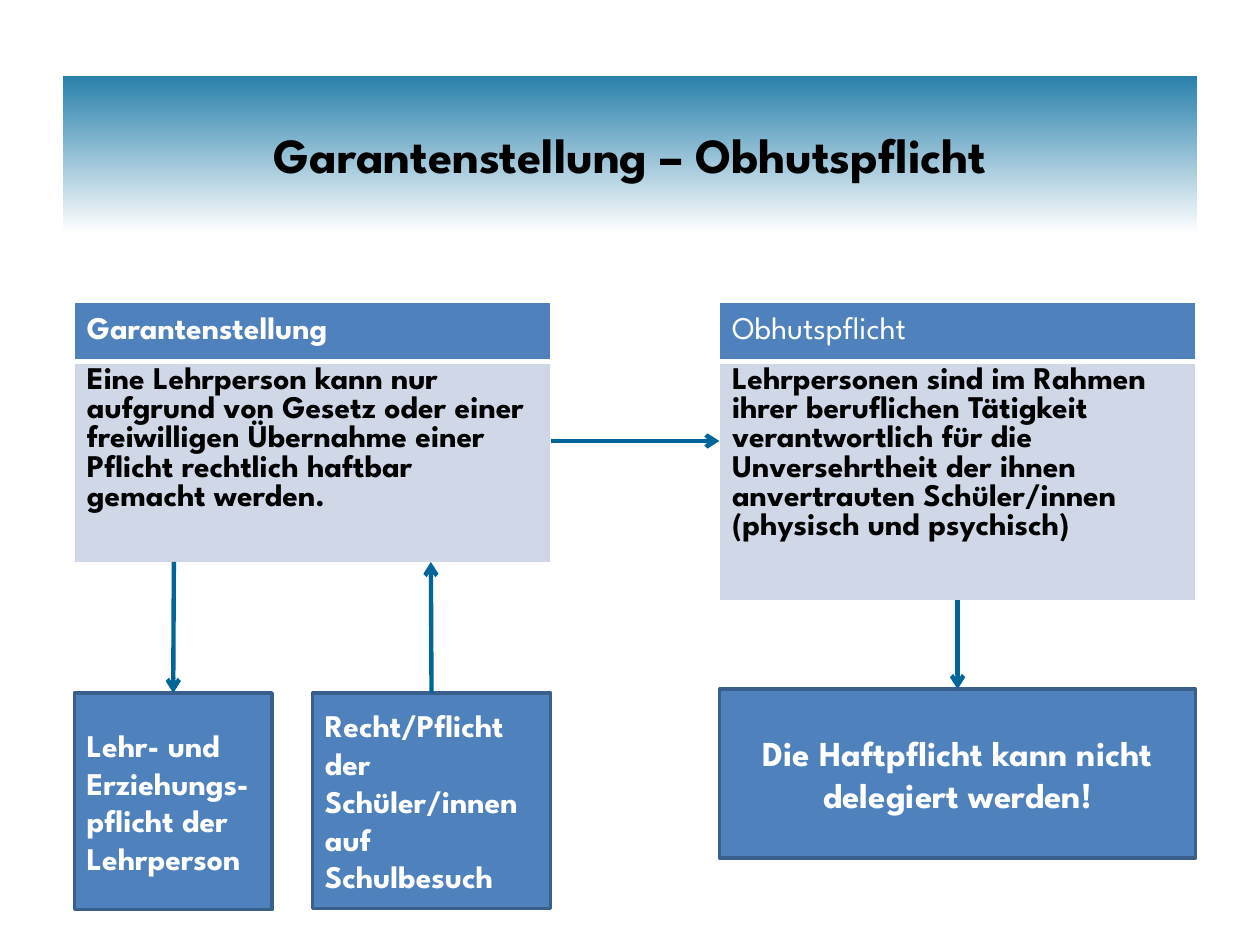
from dataclasses import dataclass

from lxml import etree
from pptx import Presentation, util as u
from pptx.dml.color import RGBColor
from pptx.enum import shapes, text
from pptx.oxml.ns import qn


@dataclass(frozen=True)
class Theme:
    font: str = "League Spartan"
    black: str = "000000"
    white: str = "FFFFFF"
    blue: str = "4F81BD"
    pale: str = "D0D8E8"
    outline: str = "3A5F8C"
    arrow: str = "006699"
    banner: str = "2880AB"
    title_size: int = 28
    emphasis_size: int = 20
    body_size: int = 18


@dataclass(frozen=True)
class Definition:
    term: str
    meaning: str
    left: float
    meaning_height: float
    term_bold: bool


@dataclass(frozen=True)
class Consequence:
    wording: str
    left: float
    top: float
    width: float
    height: float
    size: int
    align: text.PP_ALIGN


THEME = Theme()
COLUMN_WIDTH, TABLE_TOP, TERM_HEIGHT = 3.78, 2.4, 0.47
LEFT_COLUMN, RIGHT_COLUMN = 0.59, 5.71

GUARANTOR = Definition(
    "Garantenstellung",
    "Eine Lehrperson kann nur aufgrund von Gesetz oder einer freiwilligen "
    "Übernahme einer Pflicht rechtlich haftbar gemacht werden.",
    LEFT_COLUMN, 1.6, True)
CARE = Definition(
    "Obhutspflicht",
    "Lehrpersonen sind im Rahmen ihrer beruflichen Tätigkeit verantwortlich für "
    "die Unversehrtheit der ihnen anvertrauten Schüler/innen (physisch und psychisch)",
    RIGHT_COLUMN, 1.9, False)

TEACHING = Consequence("Lehr- und Erziehungs-pflicht der Lehrperson",
                       LEFT_COLUMN, 5.5, 1.57, 1.72, THEME.body_size, text.PP_ALIGN.LEFT)
ATTENDANCE = Consequence("Recht/Pflicht der Schüler/innen auf Schulbesuch",
                         2.48, 5.5, 1.89, 1.71, THEME.body_size, text.PP_ALIGN.LEFT)
LIABILITY = Consequence("Die Haftpflicht kann nicht delegiert werden!",
                        RIGHT_COLUMN, 5.47, COLUMN_WIDTH, 1.34,
                        THEME.emphasis_size, text.PP_ALIGN.CENTER)


def rgb(value: str) -> RGBColor:
    return RGBColor.from_string(value)


def add_run(paragraph, wording: str, size: int, color: str, bold: bool = True) -> None:
    run = paragraph.add_run()
    run.text = wording
    run.font.name = THEME.font
    run.font.size = u.Pt(size)
    run.font.bold = bold
    run.font.color.rgb = rgb(color)


def set_borders(cell, top: float, bottom: float) -> None:
    properties = cell._tc.get_or_add_tcPr()
    for side, width in (("L", 1), ("R", 1), ("T", top), ("B", bottom)):
        border = etree.SubElement(properties, qn(f"a:ln{side}"), w=str(u.Pt(width)))
        fill = etree.SubElement(border, qn("a:solidFill"))
        etree.SubElement(fill, qn("a:srgbClr"), val=THEME.white)


def fill_cell(cell, wording: str, fill: str, color: str, bold: bool,
              anchor: text.MSO_ANCHOR, borders: tuple[float, float]) -> None:
    set_borders(cell, *borders)
    cell.fill.solid()
    cell.fill.fore_color.rgb = rgb(fill)
    cell.vertical_anchor = anchor
    add_run(cell.text_frame.paragraphs[0], wording, THEME.body_size, color, bold)


def add_definition(slide, item: Definition) -> None:
    table = slide.shapes.add_table(
        2, 1, u.Inches(item.left), u.Inches(TABLE_TOP), u.Inches(COLUMN_WIDTH),
        u.Inches(TERM_HEIGHT + item.meaning_height)).table
    table.first_row = table.horz_banding = False
    table.rows[0].height = u.Inches(TERM_HEIGHT)
    table.rows[1].height = u.Inches(item.meaning_height)
    fill_cell(table.cell(0, 0), item.term, THEME.blue, THEME.white, item.term_bold,
              text.MSO_ANCHOR.MIDDLE, (1, 3))
    fill_cell(table.cell(1, 0), item.meaning, THEME.pale, THEME.black, True,
              text.MSO_ANCHOR.TOP, (3, 1))


def add_consequence(slide, item: Consequence):
    box = slide.shapes.add_shape(
        shapes.MSO_SHAPE.RECTANGLE, u.Inches(item.left), u.Inches(item.top),
        u.Inches(item.width), u.Inches(item.height))
    box.shadow.inherit = False
    box.fill.solid()
    box.fill.fore_color.rgb = rgb(THEME.blue)
    box.line.color.rgb = rgb(THEME.outline)
    box.line.width = u.Pt(2)
    frame = box.text_frame
    frame.word_wrap = True
    frame.vertical_anchor = text.MSO_ANCHOR.MIDDLE
    paragraph = frame.paragraphs[0]
    paragraph.alignment = item.align
    add_run(paragraph, item.wording, item.size, THEME.white)
    return box


def add_arrow(slide, start: tuple[float, float], end: tuple[float, float]):
    arrow = slide.shapes.add_connector(
        shapes.MSO_CONNECTOR.STRAIGHT, *(u.Inches(value) for value in start + end))
    arrow.line.color.rgb = rgb(THEME.arrow)
    arrow.line.width = u.Pt(2.5)
    etree.SubElement(arrow.line._get_or_add_ln(), qn("a:tailEnd"), type="arrow")
    etree.SubElement(arrow._element.spPr, qn("a:effectLst"))
    return arrow


def format_title(title) -> None:
    title.left, title.top = u.Inches(0.5), u.Inches(0.6)
    title.width, title.height = u.Inches(9), u.Inches(1.25)
    title.fill.gradient()
    title.fill.gradient_angle = 270
    for stop, color, position in zip(title.fill.gradient_stops,
                                     (THEME.banner, THEME.white), (0, 1)):
        stop.color.rgb = rgb(color)
        stop.position = position
    title.text_frame.vertical_anchor = text.MSO_ANCHOR.MIDDLE
    paragraph = title.text_frame.paragraphs[0]
    paragraph.alignment = text.PP_ALIGN.CENTER
    add_run(paragraph, "Garantenstellung – Obhutspflicht", THEME.title_size, THEME.black)


def main() -> None:
    deck = Presentation()
    deck.slide_width, deck.slide_height = u.Inches(10), u.Inches(7.5)
    slide = deck.slides.add_slide(deck.slide_layouts[5])
    format_title(slide.shapes.title)

    # The two legal terms
    for definition in (GUARANTOR, CARE):
        add_definition(slide, definition)

    # What follows from them
    teaching, attendance, liability = (
        add_consequence(slide, item) for item in (TEACHING, ATTENDANCE, LIABILITY))

    # Arrows between terms and consequences
    guarantor_bottom, care_bottom = 4.46, 4.76
    add_arrow(slide, (1.38, guarantor_bottom), (1.38, 5.5)).end_connect(teaching, 0)
    add_arrow(slide, (3.42, 5.5), (3.42, guarantor_bottom)).begin_connect(attendance, 0)
    add_arrow(slide, (LEFT_COLUMN + COLUMN_WIDTH, 3.5), (RIGHT_COLUMN, 3.5))
    add_arrow(slide, (7.6, care_bottom), (7.6, 5.47)).end_connect(liability, 0)

    deck.save("out.pptx")


if __name__ == "__main__":
    main()
